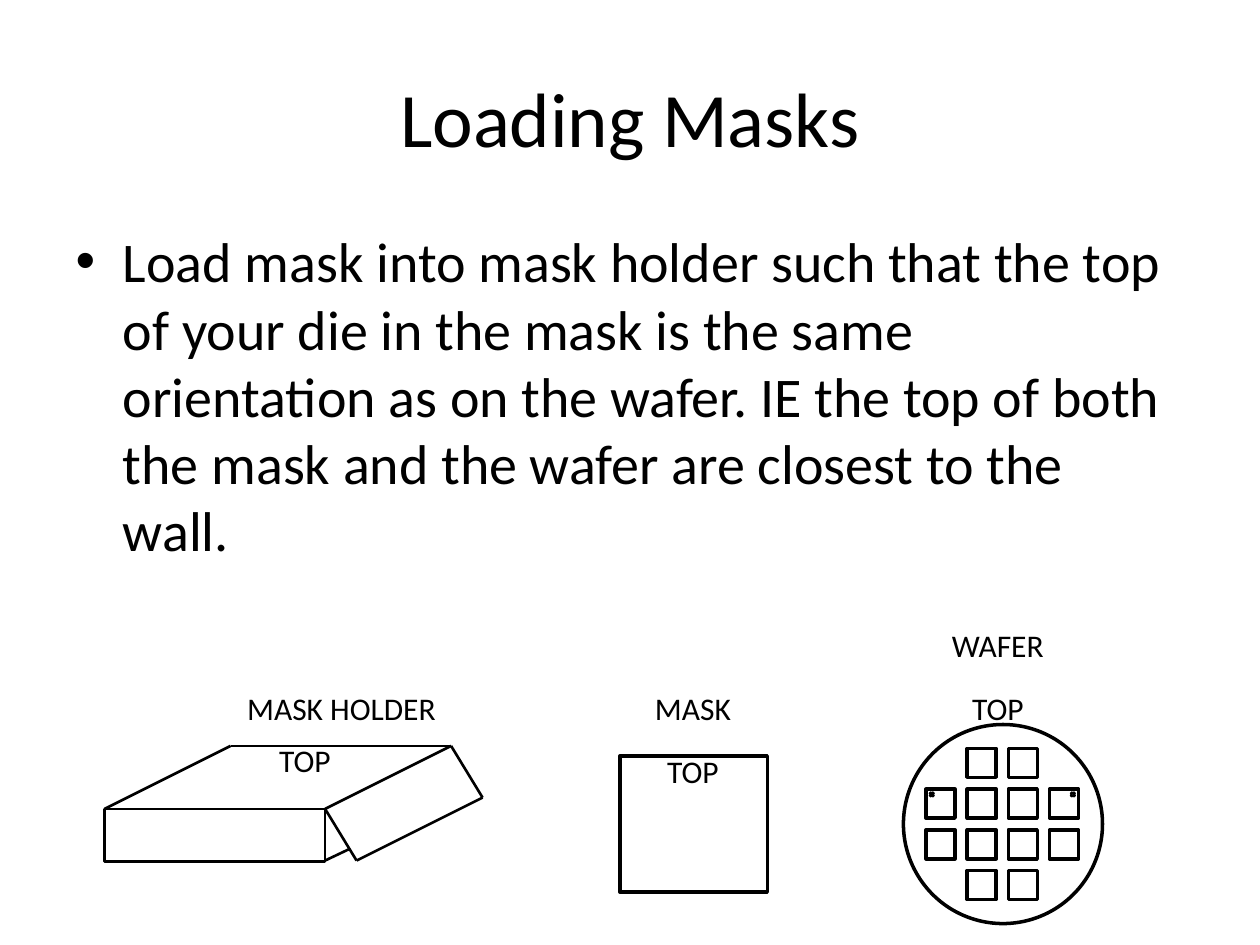
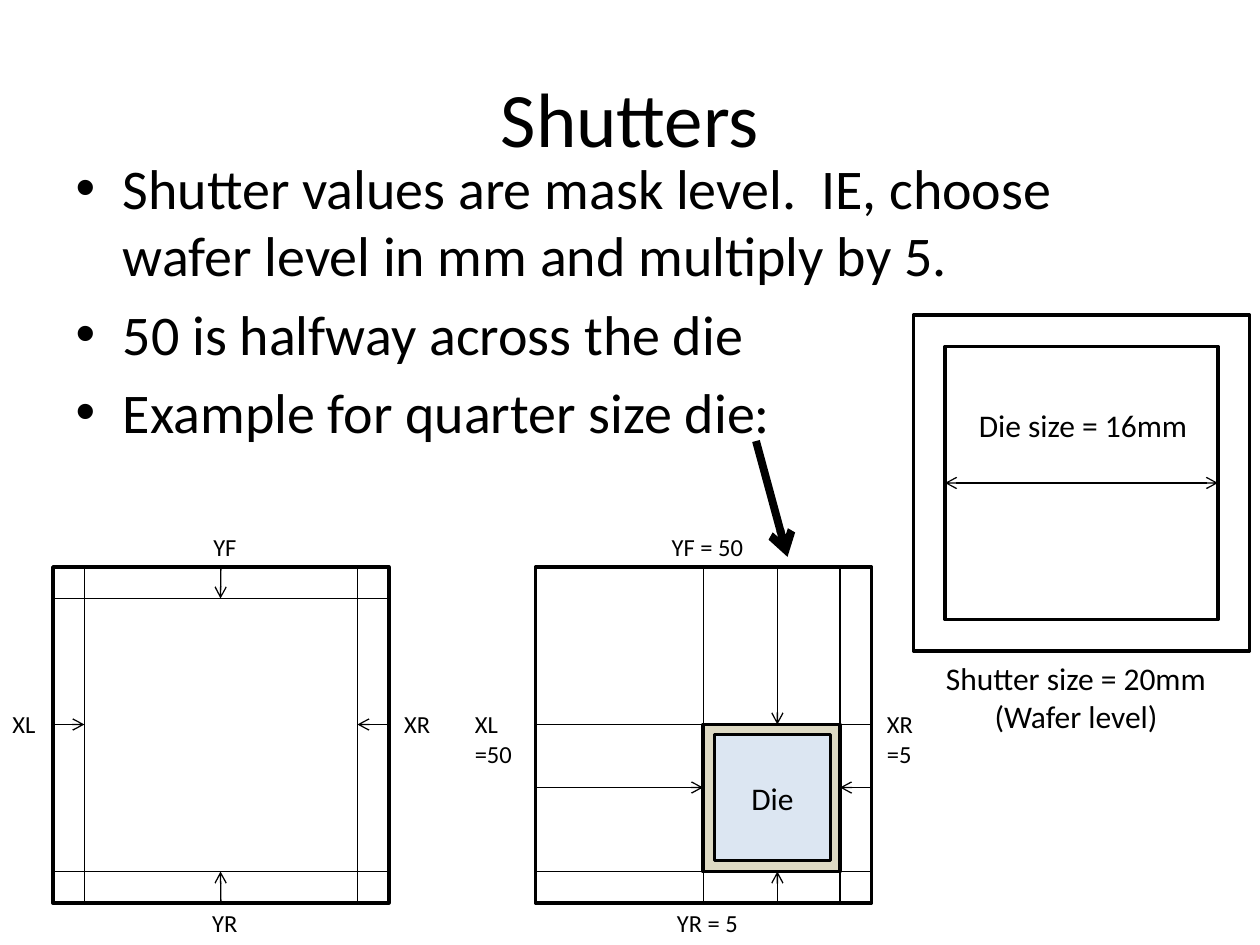
from pptx import Presentation
from pptx.dml.color import RGBColor
from pptx.enum.shapes import MSO_CONNECTOR, MSO_SHAPE
from pptx.enum.text import MSO_ANCHOR, MSO_AUTO_SIZE, PP_ALIGN
from pptx.oxml.ns import qn
from pptx.util import Cm, Pt
from lxml.etree import SubElement

INK, PAPER, SAND, SKY = "000000", "FFFFFF", "DDD9C3", "DCE6F2"
TOP, BOTTOM, LEFT, RIGHT = 0, 2, 1, 3
INCH = 2.54
SIDE = 8 / 3
RIM = 0.25


def color(value):
    return RGBColor.from_string(value)


def cm(*inches):
    return [Cm(INCH * value) for value in inches]


class Deck:
    font = "Calibri"

    def __init__(self):
        self.show = Presentation()
        self.show.slide_width, self.show.slide_height = cm(10, 7.5)

    def page(self, title, points, box):
        self.slide = self.show.slides.add_slide(self.show.slide_layouts[1])
        self.area = self.slide.shapes
        head, body = self.slide.placeholders
        self.place(head, (0.5, 0.3, 9, 1.25))
        self.place(body, box)
        self.text(head, title, 44, PP_ALIGN.CENTER)
        self.text(body, "\n".join(points), 32)

    def place(self, shape, box):
        for name, value in zip(("left", "top", "width", "height"), cm(*box)):
            setattr(shape, name, value)

    def text(self, shape, words, size, align=None, fit=MSO_AUTO_SIZE.NONE):
        frame = shape.text_frame
        frame.text = words
        frame.word_wrap = True
        frame.auto_size = fit
        style = {"name": self.font, "size": Pt(size)}
        for para in frame.paragraphs:
            para.alignment = align
            for run in para.runs:
                for name, value in style.items():
                    setattr(run.font, name, value)
                run.font.color.rgb = color(INK)

    def group(self):
        self.area = self.slide.shapes.add_group_shape().shapes

    def loose(self):
        self.area = self.slide.shapes

    def shape(self, box, fill=None, width=2, kind=MSO_SHAPE.RECTANGLE):
        shape = self.area.add_shape(kind, *cm(*box))
        shape.shadow.inherit = False
        if fill:
            shape.fill.solid()
            shape.fill.fore_color.rgb = color(fill)
        else:
            shape.fill.background()
        shape.line.color.rgb = color(INK)
        shape.line.width = Pt(width)
        return shape

    def label(self, words, box, size=18, align=PP_ALIGN.CENTER):
        shape = self.area.add_textbox(*cm(*box))
        self.text(shape, words, size, align, MSO_AUTO_SIZE.SHAPE_TO_FIT_TEXT)

    def line(self, start, end, width=0.75, tips=(), begin=None, finish=None):
        line = self.area.add_connector(MSO_CONNECTOR.STRAIGHT, *cm(*start, *end))
        if begin:
            line.begin_connect(*begin)
        if finish:
            line.end_connect(*finish)
        line.line.color.rgb = color(INK)
        line.line.width = Pt(width)
        props = line.element.spPr
        for tip in tips:
            SubElement(props.find(qn("a:ln")), qn(f"a:{tip}End"), type="arrow")
        SubElement(props, qn("a:effectLst"))


def holder(deck):
    deck.group()
    deck.shape((0.83, 6.42, 1.75, 0.42), PAPER, 1.5)
    back, hinge, front = (1.83, 5.92), (3.58, 5.92), (2.58, 6.42)
    far, near = (3.83, 6.33), (2.83, 6.83)
    edges = [(back, hinge), (back, (0.83, 6.42)), (hinge, front), (far, hinge),
             (near, front), (far, near), ((2.77, 6.74), (2.58, 6.83))]
    for start, end in edges:
        deck.line(start, end, 1.5)
    deck.loose()


def wafer(deck):
    deck.group()
    deck.shape((7.17, 5.75, 1.58, 1.58), kind=MSO_SHAPE.OVAL)
    for row in range(4):
        for col in range(4) if row in (1, 2) else (1, 2):
            deck.shape((7.35 + 0.98 * col / 3, 5.94 + 0.97 * row / 3, 0.23, 0.23), PAPER)
    for left in (7.37, 8.49):
        deck.shape((left, 6.28, 0.05, 0.05), PAPER, 1, MSO_SHAPE.MATH_MULTIPLY)
    deck.loose()


def shutter(deck, left, cut, top, mid, names, shift, tall, centred):
    deck.group()
    head, foot, right = 4.5, 4.5 + SIDE, left + SIDE
    edge, floor = right - RIM, foot - RIM
    frame = deck.shape((left, head, SIDE, SIDE))
    ends = {"begin": (frame, TOP), "finish": (frame, BOTTOM)}
    deck.line((cut, head), (cut, foot), **({} if centred else ends))
    deck.line((edge, head), (edge, foot))
    for level in (top, floor):
        deck.line((left, level), (right, level))
    across, down = mid
    joins = ((frame, TOP), (frame, BOTTOM)) if centred else (None, None)
    for start, end, join in (((across, head), (across, top), joins[0]),
                             ((across, foot), (across, floor), joins[1]),
                             ((left, down), (cut, down), None),
                             ((right, down), (edge, down), None)):
        deck.line(start, end, tips=["tail"], begin=join)
    front, rear, west, east = names
    for words, level in ((front, 4.17), (rear, 7.16)):
        deck.label(words, (left + 0.75, level, 1.23, 0.34), 14)
    for words, spot in ((west, left - shift), (east, left + 2.69)):
        deck.label(words, (spot, 5.58, 0.56, tall), 14, PP_ALIGN.LEFT)
    if not centred:
        deck.shape((cut, top, edge - cut, floor - top), SAND)
    deck.loose()


def masks(deck):
    deck.page("Loading Masks", [
        "Load mask into mask holder such that the top of your die in the mask "
        "is the same orientation as on the wafer. IE the top of both the mask "
        "and the wafer are closest to the wall."], (0.5, 1.75, 8.83, 3.33))
    holder(deck)
    deck.shape((4.92, 6, 1.17, 1.08), PAPER)
    wafer(deck)
    for words, left, top, width in (("TOP", 4.75, 5.92, 1.5),
                                    ("MASK", 4.75, 5.42, 1.5),
                                    ("MASK HOLDER", 1.75, 5.42, 1.92),
                                    ("TOP", 7.17, 5.42, 1.5),
                                    ("WAFER", 7.17, 4.92, 1.5),
                                    ("TOP", 1.67, 5.83, 1.5)):
        deck.label(words, (left, top, width, 0.4))


def shutters(deck):
    deck.page("Shutters", [
        "Shutter values are mask level.  IE, choose wafer level in mm and multiply by 5.",
        "50 is halfway across the die",
        "Example for quarter size die:"], (0.5, 1.17, 9, 2.58))
    shutter(deck, 0.42, 0.67, 4.75, (1.75, 5.75),
            ("YF", "YR", "XL", "XR"), 0.42, 0.34, True)
    shutter(deck, 4.25, 5.58, 5.75, (6.17, 6.25),
            ("YF = 50", "YR = 5", "XL\n=50", "XR =5"), 0.58, 0.57, False)
    deck.shape((7.25, 2.5, SIDE, SIDE))
    inner = SIDE - 2 * RIM
    die = deck.shape((7.5, 2.75, inner, inner))
    deck.line((7.5, 3.83), (9.67, 3.83), tips=["head", "tail"],
              begin=(die, LEFT), finish=(die, RIGHT))
    deck.label("Die size = 16mm", (7.67, 3.17, 1.92, 0.4), align=PP_ALIGN.LEFT)
    deck.label("Shutter size = 20mm (Wafer level)", (7.25, 5.18, 2.58, 0.71))
    core = deck.shape((5.67, 5.83, 0.92, 1), SKY)
    deck.text(core, "Die", 18, PP_ALIGN.CENTER)
    core.text_frame.vertical_anchor = MSO_ANCHOR.MIDDLE
    deck.line((6, 3.5), (6.25, 4.42), 4.5, ["tail"])


def main():
    deck = Deck()
    masks(deck)
    shutters(deck)
    deck.show.save("out.pptx")


if __name__ == "__main__":
    main()
